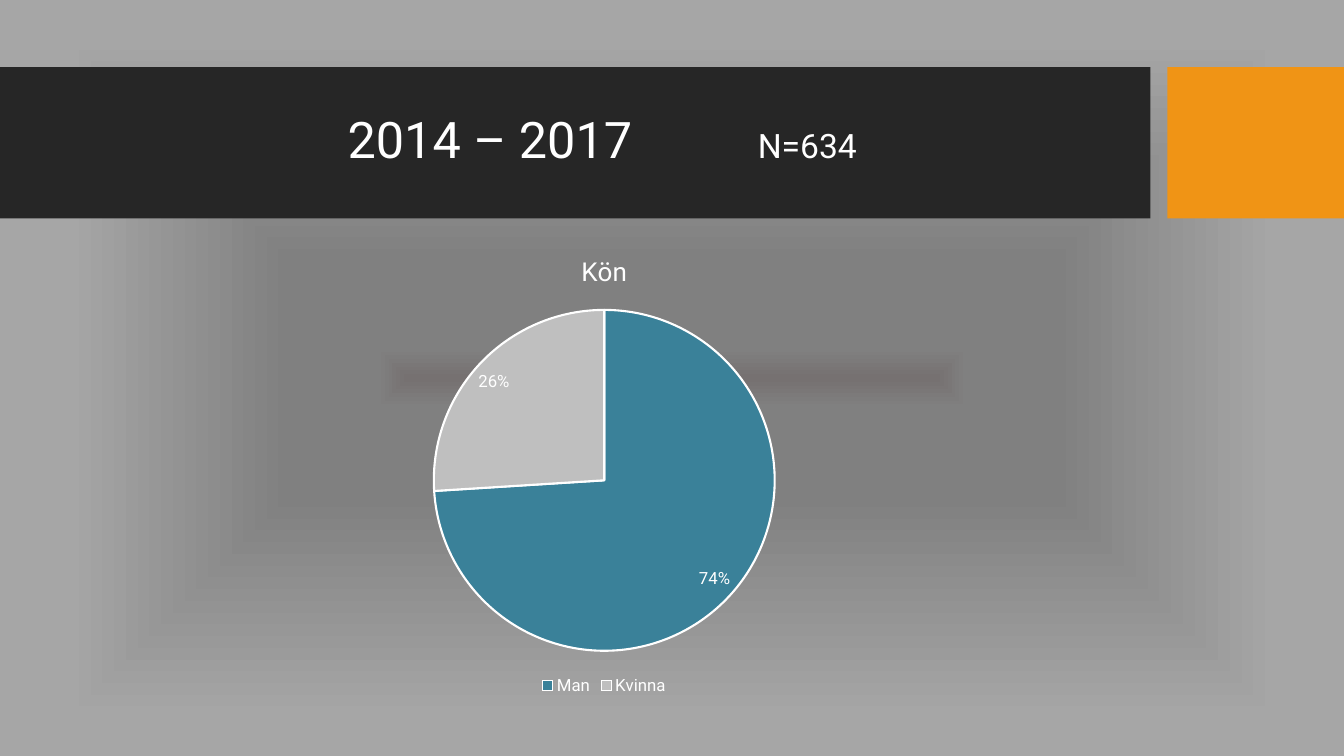
from lxml import etree
from pptx import Presentation
from pptx.chart.data import CategoryChartData
from pptx.dml.color import RGBColor
from pptx.enum.chart import XL_CHART_TYPE, XL_LABEL_POSITION, XL_LEGEND_POSITION
from pptx.enum.shapes import MSO_SHAPE
from pptx.enum.text import MSO_ANCHOR
from pptx.oxml.ns import qn
from pptx.util import Pt

PIE = XL_CHART_TYPE.PIE
BEST_FIT = XL_LABEL_POSITION.BEST_FIT
BOTTOM = XL_LEGEND_POSITION.BOTTOM
RECT = MSO_SHAPE.RECTANGLE
MIDDLE = MSO_ANCHOR.MIDDLE

FONT = "Roboto"
COLORS = {
    "white": "FFFFFF",
    "band": "262626",
    "accent": "F09415",
    "man": "3A8199",
    "kvinna": "BFBFBF",
}
BACKGROUND_STOPS = [(0, "767171"), (8, "808080"), (31, "808080"), (90, "A6A6A6")]


def rgb(name):
    return RGBColor.from_string(COLORS[name])


def set_font(font, size):
    font.name = FONT
    font.size = Pt(size)
    font.bold = False
    font.color.rgb = rgb("white")


prs = Presentation()
prs.slide_width, prs.slide_height = Pt(960), Pt(540)
s = prs.slides.add_slide(prs.slide_layouts[6])

# Background: gradient spreading from the centre
s.background.fill.gradient()
grad = s.background._cSld.find(".//" + qn("a:gradFill"))
for child in list(grad):
    grad.remove(child)
stops = etree.SubElement(grad, qn("a:gsLst"))
for percent, color in BACKGROUND_STOPS:
    stop = etree.SubElement(stops, qn("a:gs"), pos=str(percent * 1000))
    etree.SubElement(stop, qn("a:srgbClr"), val=color)
spread = etree.SubElement(grad, qn("a:path"), path="shape")
etree.SubElement(spread, qn("a:fillToRect"), l="50000", t="50000", r="50000", b="50000")

# Title band
for left, width, color in [(0, 821.8, "band"), (833.8, 126.2, "accent")]:
    sp = s.shapes.add_shape(RECT, Pt(left), Pt(48), Pt(width), Pt(108))
    sp.shadow.inherit = False
    sp.fill.solid()
    sp.fill.fore_color.rgb = rgb(color)
    sp.line.fill.background()

# Title, with the sample size at a tab stop
title = s.shapes.add_textbox(Pt(53.3), Pt(59), Pt(756.7), Pt(85))
tf = title.text_frame
tf.word_wrap = True
tf.vertical_anchor = MIDDLE
tf.margin_left = Pt(195)
p = tf.paragraphs[0]
tabs = etree.SubElement(p._p.get_or_add_pPr(), qn("a:tabLst"))
etree.SubElement(tabs, qn("a:tab"), pos=str(Pt(293)), algn="l")
p.line_spacing = 0.9
for text, size in [("2014 – 2017\t", 36), ("N=634", 24)]:
    r = p.add_run()
    r.text = text
    set_font(r.font, size)

# Pie chart
data = CategoryChartData(number_format="0%")
data.categories = ["Man", "Kvinna"]
data.add_series("Kön", [0.74, 0.26])
frame = s.shapes.add_chart(PIE, Pt(53.3), Pt(168), Pt(756.7), Pt(332), data)
chart = frame.chart
set_font(chart.font, 10)

chart.has_title = True
chart.chart_title.include_in_layout = False
title_p = chart.chart_title.text_frame.paragraphs[0]
title_p.text = "Kön"
set_font(title_p.runs[0].font, 18.6)

chart.has_legend = True
chart.legend.position = BOTTOM
chart.legend.include_in_layout = False
set_font(chart.legend.font, 12)

plot = chart.plots[0]
plot.vary_by_categories = True
series = plot.series[0]
for i, color in enumerate(["man", "kvinna"]):
    fmt = series.points[i].format
    fmt.fill.solid()
    fmt.fill.fore_color.rgb = rgb(color)
    fmt.line.color.rgb = rgb("white")
    fmt.line.width = Pt(1.5)

labels = series.data_labels
labels.show_value = True
labels.show_percentage = False
labels.number_format = "0%"
labels.number_format_is_linked = False
labels.position = BEST_FIT
set_font(labels.font, 12)

prs.save("out.pptx")
